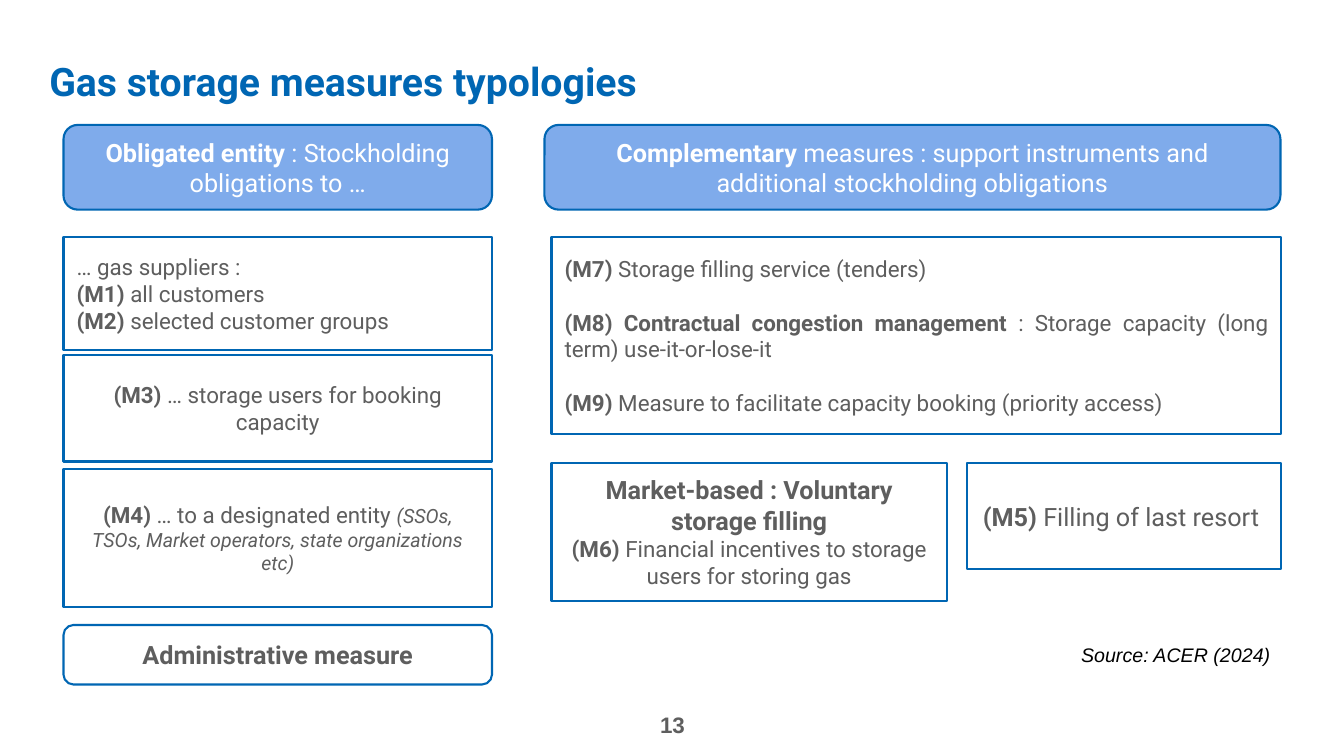
from lxml import etree
from pptx import Presentation, util as u
from pptx.dml.color import RGBColor
from pptx.enum import shapes, text
from pptx.oxml.ns import qn

THEME = {
    "blue": RGBColor.from_string("0066B3"),
    "header": RGBColor.from_string("6096E6"),
    "grey": RGBColor.from_string("5E5E5E"),
    "white": RGBColor.from_string("FFFFFF"),
    "black": RGBColor.from_string("000000"),
    "title": 28, "heading": 18, "body": 16, "note": 14,
    "font": "Roboto", "plain": "Arial",
}
RECT = shapes.MSO_SHAPE.RECTANGLE
ROUNDED = shapes.MSO_SHAPE.FLOWCHART_ALTERNATE_PROCESS
LEFT, CENTER = text.PP_ALIGN.LEFT, text.PP_ALIGN.CENTER
RIGHT, JUSTIFY = text.PP_ALIGN.RIGHT, text.PP_ALIGN.JUSTIFY

deck = Presentation()
deck.slide_width, deck.slide_height = u.Inches(13.33), u.Inches(7.5)
slide = deck.slides.add_slide(deck.slide_layouts[6])

COLUMNS = {
    "title": (2.93, 94.22), "obligated": (4.73, 31.88),
    "complementary": (40.51, 54.76), "support": (41.04, 54.31),
    "market": (41.04, 29.41), "resort": (71.94, 23.41),
    "source": (75.54, 19.73), "number": (41.11, 17.85),
}
ROWS = {
    "title": (5.6, 10.27), "header": (16.53, 11.2),
    "suppliers": (31.33, 14.93), "users": (46.93, 14.13),
    "designated": (62, 18.27), "support": (31.33, 26.13),
    "market": (61.2, 18.27), "resort": (61.2, 14.13),
    "administrative": (82.67, 7.87), "source": (84.4, 4.53),
    "number": (93.47, 4.67),
}


def place(column, row):
    (x, width), (y, height) = COLUMNS[column], ROWS[row]
    return [int(share * side / 100) for share, side in (
        (x, deck.slide_width), (y, deck.slide_height),
        (width, deck.slide_width), (height, deck.slide_height))]


def write(frame, paragraphs, align, color, font, gap=0):
    frame.word_wrap = True
    for index, pieces in enumerate(paragraphs):
        paragraph = frame.paragraphs[0] if index == 0 else frame.add_paragraph()
        paragraph.alignment = align
        if index and gap:
            paragraph.space_before = u.Pt(gap)
        for words, size, style in pieces:
            run = paragraph.add_run()
            run.text = words
            run.font.name = THEME[font]
            run.font.size = u.Pt(THEME[size])
            run.font.color.rgb = THEME[color]
            run.font.bold = "b" in style
            run.font.italic = "i" in style


captions = [
    ("number", "13", "body", "b", CENTER, "grey", "plain"),
    ("title", "Gas storage measures typologies", "title", "b", LEFT, "blue", "font"),
    ("source", "Source: ACER (2024)", "note", "i", RIGHT, "black", "plain"),
]
for part, words, size, style, align, color, font in captions:
    caption = slide.shapes.add_textbox(*place(part, part)).text_frame
    if part == "title":
        caption.vertical_anchor = text.MSO_ANCHOR.MIDDLE
    write(caption, [[(words, size, style)]], align, color, font)

measures = [
    ("obligated", "suppliers", RECT, JUSTIFY, 0, [
        [("… gas suppliers :", "body", "")],
        [("(M1) ", "body", "b"), ("all customers", "body", "")],
        [("(M2) ", "body", "b"), ("selected customer groups", "body", "")]]),
    ("obligated", "users", RECT, CENTER, 0, [
        [("(M3)", "body", "b"), (" … storage users for booking capacity", "body", "")]]),
    ("obligated", "designated", RECT, CENTER, 0, [
        [("(M4)", "body", "b"), (" … to a designated entity ", "body", ""),
         ("(SSOs, TSOs, Market operators, state organizations etc)", "note", "i")]]),
    ("resort", "resort", RECT, CENTER, 0, [
        [("(M5)", "heading", "b"), (" Filling of last resort ", "heading", "")]]),
    ("market", "market", RECT, CENTER, 0, [
        [("Market-based : Voluntary storage filling", "heading", "b")],
        [("(M6)", "body", "b"),
         (" Financial incentives to storage users for storing gas", "body", "")]]),
    ("support", "support", RECT, JUSTIFY, 19, [
        [("(M7)", "body", "b"), (" Storage filling service (tenders)", "body", "")],
        [("(M8) Contractual congestion management", "body", "b"),
         (" : Storage capacity (long term) use-it-or-lose-it", "body", "")],
        [("(M9)", "body", "b"),
         (" Measure to facilitate capacity booking (priority access)", "body", "")]]),
    ("obligated", "header", ROUNDED, CENTER, 0, [
        [("Obligated entity", "heading", "b"),
         (" : Stockholding obligations to …", "heading", "")]]),
    ("complementary", "header", ROUNDED, CENTER, 0, [
        [("Complementary ", "heading", "b"),
         ("measures : support instruments and additional stockholding obligations",
          "heading", "")]]),
    ("obligated", "administrative", ROUNDED, CENTER, 0, [
        [("Administrative measure", "heading", "b")]]),
]
for column, row, outline, align, gap, paragraphs in measures:
    measure = slide.shapes.add_shape(outline, *place(column, row))
    measure.shadow.inherit = False
    measure.line.color.rgb = THEME["blue"]
    measure.line.width = u.Pt(1.5)
    if row == "header":
        measure.fill.solid()
        measure.fill.fore_color.rgb = THEME["header"]
        tint = measure.fill._xPr.find(qn("a:solidFill"))[0]
        etree.SubElement(tint, qn("a:alpha"), val="80000")
    else:
        measure.fill.background()
    frame = measure.text_frame
    frame.margin_left = frame.margin_right = u.Inches(0.13)
    frame.margin_top = frame.margin_bottom = u.Inches(0.13)
    frame.vertical_anchor = text.MSO_ANCHOR.MIDDLE
    write(frame, paragraphs, align, "white" if row == "header" else "grey", "font", gap)

deck.save("out.pptx")
